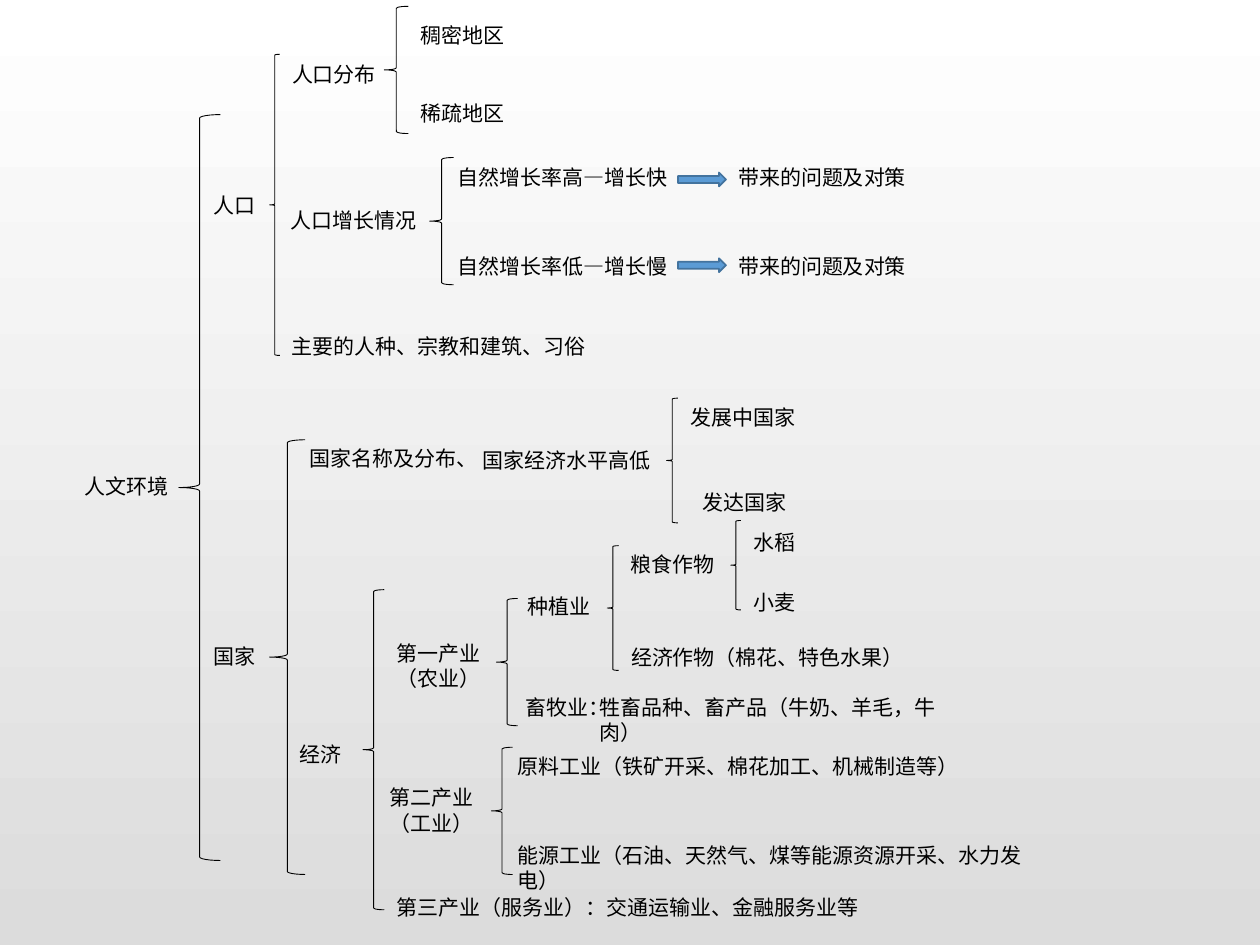
from pptx import Presentation
from pptx.dml.color import RGBColor
from pptx.enum.shapes import MSO_SHAPE
from pptx.enum.text import MSO_AUTO_SIZE
from pptx.util import Pt

BRACE = MSO_SHAPE.LEFT_BRACE
ARROW = MSO_SHAPE.RIGHT_ARROW
GROW = MSO_AUTO_SIZE.SHAPE_TO_FIT_TEXT
COLORS = {
    "top": "FFFFFF",
    "bottom": "DCDCDC",
    "ink": "000000",
    "arrow": "5B9BD5",
    "arrow_edge": "43739E",
}
FONT = "Noto Sans CJK SC"
LINE_HEIGHT = 14.4
INSETS = 7.2

LABELS = [
    ("人文环境", 41, 267.1, 73.4),
    ("人口", 115.2, 106.6, 55.4),
    ("主要的人种、宗教和建筑、习俗", 159.8, 187.2, 237.6),
    ("人口分布", 159.8, 31.7, 73.4),
    ("人口增长情况", 159.1, 115.2, 108.7),
    ("稠密地区", 233.3, 9.4, 82),
    ("稀疏地区", 233.3, 54, 82),
    ("国家", 115.2, 364.3, 40.3),
    ("国家名称及分布、", 169.9, 251.3, 126.7),
    ("国家经济水平高低", 268.6, 252, 111),
    ("发展中国家", 387.4, 227.5, 92.9),
    ("发达国家", 394.6, 276.5, 73.4),
    ("第一产业\n（农业）", 219.6, 362.2, 73.4),
    ("第二产业\n（工业）", 215.3, 445, 73.4),
    ("第三产业（服务业）：交通运输业、金融服务业等", 219.6, 507.6, 341.3),
    ("经济", 164.2, 420.5, 43.9),
    ("种植业", 294.5, 335.5, 59),
    ("畜牧业：", 293, 393.1, 63),
    ("粮食作物", 353.5, 311.8, 76.3),
    ("经济作物（棉花、特色水果）", 353.5, 365, 222.5),
    ("水稻", 423.4, 298.8, 49),
    ("小麦", 423.4, 333.4, 49),
    ("牲畜品种、畜产品（牛奶、羊毛，牛肉）", 335.5, 393.1, 225.4),
    ("原料工业（铁矿开采、棉花加工、机械制造等）", 288.7, 427, 268),
    ("能源工业（石油、天然气、煤等能源资源开采、水力发电）", 288.7, 478.1, 316.1),
]
BRACES = [
    (102.2, 65.5, 23.8, 426.2),
    (154.1, 31, 5.8, 172.1),
    (219.6, 3.6, 13.7, 72.7),
    (245.5, 90, 13.7, 72.7),
    (154.1, 251.3, 20.2, 248.4),
    (380.9, 227.5, 6.5, 71.3),
    (207.4, 337, 12.2, 182.9),
    (283.7, 342, 12.2, 72.7),
    (347, 311.8, 6.5, 71.3),
    (417.6, 297.4, 5.8, 51.1),
    (280.8, 427, 12.2, 72.7),
]
GROWTH_ROWS = [
    ("自然增长率高—增长快", 90.7, 98.6),
    ("自然增长率低—增长慢", 141.1, 147.6),
]


def color(name):
    return RGBColor.from_string(COLORS[name])


def write_text(frame, text, size=12, ink="ink", font=FONT):
    frame.text = text
    for para in frame.paragraphs:
        for span in para.runs:
            span.font.size = Pt(size)
            span.font.name = font
            span.font.color.rgb = color(ink)


class ConceptMap:
    def __init__(self, page):
        self.page = page

    def background(self):
        fill = self.page.background.fill
        fill.gradient()
        fill.gradient_angle = 270
        for stop, name in zip(fill.gradient_stops, ("top", "bottom")):
            stop.color.rgb = color(name)

    def label(self, text, left, top, width):
        height = INSETS + LINE_HEIGHT * len(text.splitlines())
        box = self.page.shapes.add_textbox(Pt(left), Pt(top), Pt(width), Pt(height))
        box.text_frame.word_wrap = True
        box.text_frame.auto_size = GROW
        write_text(box.text_frame, text)

    def outline(self, kind, place, edge, weight):
        shape = self.page.shapes.add_shape(kind, *map(Pt, place))
        shape.shadow.inherit = False
        shape.line.color.rgb = color(edge)
        shape.line.width = Pt(weight)
        return shape

    def brace(self, *place):
        self.outline(BRACE, place, "ink", 0.5).fill.background()

    def arrow(self, *place):
        shape = self.outline(ARROW, place, "arrow_edge", 1)
        shape.fill.solid()
        shape.fill.fore_color.rgb = color("arrow")


def main():
    deck = Presentation()
    deck.slide_width, deck.slide_height = Pt(720), Pt(540)
    concept_map = ConceptMap(deck.slides.add_slide(deck.slide_layouts[6]))
    concept_map.background()
    for place in BRACES:
        concept_map.brace(*place)
    for label in LABELS:
        concept_map.label(*label)
    for text, top, arrow_top in GROWTH_ROWS:
        concept_map.label(text, 254.2, top, 160.6)
        concept_map.arrow(387.4, arrow_top, 27.4, 7.9)
        concept_map.label("带来的问题及对策", 414.7, top, 137.5)
    deck.save("out.pptx")


if __name__ == "__main__":
    main()
